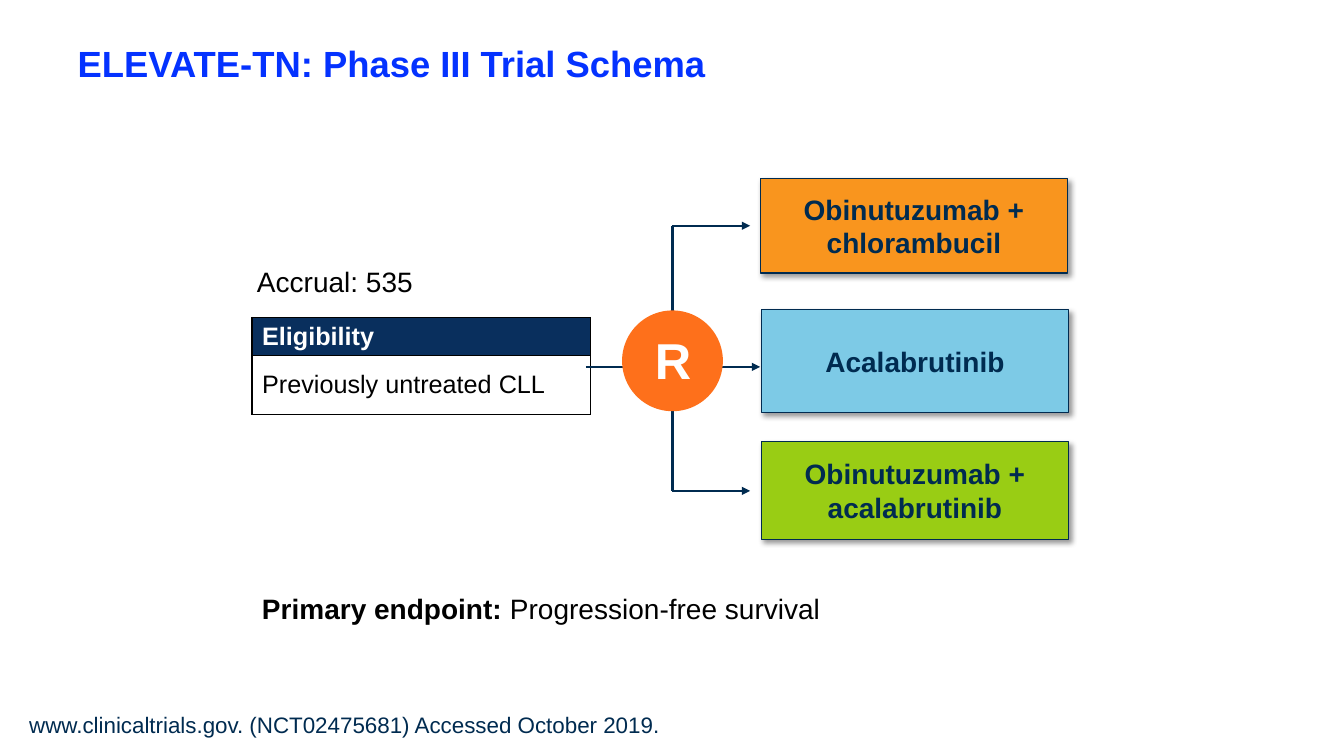
from lxml.etree import SubElement
from pptx import Presentation
from pptx.dml.color import RGBColor
from pptx.enum.shapes import MSO_CONNECTOR as Connector, MSO_SHAPE as Shape
from pptx.enum.text import MSO_ANCHOR as Anchor, MSO_AUTO_SIZE as AutoSize, PP_ALIGN as Align
from pptx.oxml.ns import qn
from pptx.util import Inches, Pt

NAVY = RGBColor(0x00, 0x2B, 0x50)
HEADER_NAVY = RGBColor(0x09, 0x2F, 0x5D)
TITLE_BLUE = RGBColor(0x04, 0x32, 0xFF)
AMBER = RGBColor(0xF9, 0x95, 0x1E)
SKY = RGBColor(0x7D, 0xCA, 0xE6)
GREEN = RGBColor(0x99, 0xCD, 0x14)
ORANGE = RGBColor(0xFE, 0x70, 0x1B)
BLACK = RGBColor(0x00, 0x00, 0x00)
WHITE = RGBColor(0xFF, 0xFF, 0xFF)


def style(font, size, color, bold=False):
    font.name = "Arial"
    font.size = Pt(size)
    font.color.rgb = color
    font.bold = bold


def place(shape, box):
    shape.left, shape.top, shape.width, shape.height = map(Inches, box)


def add_label(slide, box, parts, size, color, anchor=Anchor.TOP):
    """Add a one-line text box; parts is a list of (text, bold)."""
    label = slide.shapes.add_textbox(*map(Inches, box))
    frame = label.text_frame
    frame.word_wrap = True
    frame.vertical_anchor = anchor
    for text, bold in parts:
        span = frame.paragraphs[0].add_run()
        span.text = text
        style(span.font, size, color, bold)
    return frame


def add_line(slide, start, end, arrow=False):
    points = map(Inches, (*start, *end))
    line = slide.shapes.add_connector(Connector.STRAIGHT, *points)
    line.line.color.rgb = NAVY
    line.line.width = Pt(1.5)
    if arrow:
        SubElement(line.line._get_or_add_ln(), qn("a:tailEnd"), type="triangle")
    SubElement(line._element.spPr, qn("a:effectLst"))


def add_title(slide, box):
    title = slide.shapes.title
    place(title, box)
    frame = title.text_frame
    frame.text = "ELEVATE-TN: Phase III Trial Schema"
    frame.auto_size = AutoSize.NONE
    frame.vertical_anchor = Anchor.MIDDLE
    frame.paragraphs[0].alignment = Align.LEFT
    style(frame.paragraphs[0].runs[0].font, 26, TITLE_BLUE, True)


def add_borders(cell):
    properties = cell._tc.get_or_add_tcPr()
    for side in ("a:lnL", "a:lnR", "a:lnT", "a:lnB"):
        border = SubElement(properties, qn(side), w=str(Pt(1)))
        fill = SubElement(border, qn("a:solidFill"))
        SubElement(fill, qn("a:srgbClr"), val=str(BLACK))


def add_eligibility(slide, box):
    rows = [
        ("Eligibility", 0.38, HEADER_NAVY, WHITE, True),
        ("Previously untreated CLL", 0.58, WHITE, BLACK, False),
    ]
    table = slide.shapes.add_table(len(rows), 1, *map(Inches, box)).table
    table.first_row = table.horz_banding = False
    for index, (text, height, fill, color, bold) in enumerate(rows):
        table.rows[index].height = Inches(height)
        cell = table.cell(index, 0)
        cell.text_frame.text = text
        cell.vertical_anchor = Anchor.MIDDLE
        add_borders(cell)
        cell.fill.solid()
        cell.fill.fore_color.rgb = fill
        para = cell.text_frame.paragraphs[0]
        para.line_spacing = Pt(19.6)
        style(para.runs[0].font, 18, color, bold)


def add_shadow(shape):
    shape.shadow.inherit = False
    effects = shape._element.spPr.find(qn("a:effectLst"))
    shadow = SubElement(effects, qn("a:outerShdw"), blurRad=str(Pt(4)), dist=str(Pt(3)),
                        dir="2700000", algn="tl", rotWithShape="0")
    color = SubElement(shadow, qn("a:srgbClr"), val=str(BLACK))
    SubElement(color, qn("a:alpha"), val="40000")


def add_arm(slide, box, lines, color):
    arm = slide.shapes.add_shape(Shape.RECTANGLE, *map(Inches, box))
    arm.fill.solid()
    arm.fill.fore_color.rgb = color
    arm.line.color.rgb = NAVY
    arm.line.width = Pt(1)
    add_shadow(arm)
    frame = arm.text_frame
    frame.text = "\n".join(lines)
    frame.vertical_anchor = Anchor.MIDDLE
    for para in frame.paragraphs:
        para.alignment = Align.CENTER
        style(para.runs[0].font, 20, NAVY, True)


def add_randomization(slide, box):
    """Draw the branching lines and, on top of them, the R circle."""
    left, top, width, height = box
    center = left + width / 2
    upper, middle, lower = top - 0.84, top + 0.56, top + 1.79
    tip = center + 0.77

    # Branches
    add_line(slide, (left - 0.36, middle), (center, middle))
    add_line(slide, (center, lower), (center, upper))
    for level in (lower, upper):
        add_line(slide, (center, level), (tip, level), arrow=True)
    add_line(slide, (center, middle), (tip + 0.1, middle), arrow=True)

    # Circle and its letter
    circle = slide.shapes.add_shape(Shape.OVAL, *map(Inches, box))
    circle.fill.solid()
    circle.fill.fore_color.rgb = ORANGE
    circle.line.fill.background()
    circle.shadow.inherit = False
    inner = (left + 0.09, top + 0.09, width - 0.17, height - 0.17)
    frame = add_label(slide, inner, [("R", True)], 36, WHITE, Anchor.MIDDLE)
    frame.margin_left = frame.margin_right = frame.margin_top = 0
    frame.paragraphs[0].alignment = Align.CENTER


def add_source(slide, box):
    text = "www.clinicaltrials.gov. (NCT02475681) Accessed October 2019."
    frame = add_label(slide, box, [(text, False)], 16, NAVY, Anchor.BOTTOM)
    frame.margin_left = Inches(0.2)
    frame.margin_bottom = Inches(0.1)


def main():
    deck = Presentation()
    deck.slide_width, deck.slide_height = Inches(13.33), Inches(7.5)
    slide = deck.slides.add_slide(deck.slide_layouts[5])

    add_title(slide, (0.67, 0, 12, 1.25))

    # Patients
    add_label(slide, (2.45, 2.57, 3.78, 0.44), [("Accrual: 535", False)], 20, BLACK)
    add_eligibility(slide, (2.5, 3.15, 3.36, 0.96))

    # Randomization and treatment arms
    add_randomization(slide, (6.17, 3.08, 1, 1))
    add_arm(slide, (7.54, 1.77, 3.05, 0.94), ["Obinutuzumab +", "chlorambucil"], AMBER)
    add_arm(slide, (7.55, 3.07, 3.05, 1.02), ["Acalabrutinib"], SKY)
    add_arm(slide, (7.55, 4.38, 3.05, 0.97), ["Obinutuzumab +", "acalabrutinib"], GREEN)

    # Endpoint and source
    endpoint = [("Primary endpoint: ", True), ("Progression-free survival", False)]
    add_label(slide, (2.5, 5.82, 7.79, 0.44), endpoint, 20, BLACK)
    add_source(slide, (0.09, 7, 8.5, 0.42))

    deck.save("out.pptx")


if __name__ == "__main__":
    main()
